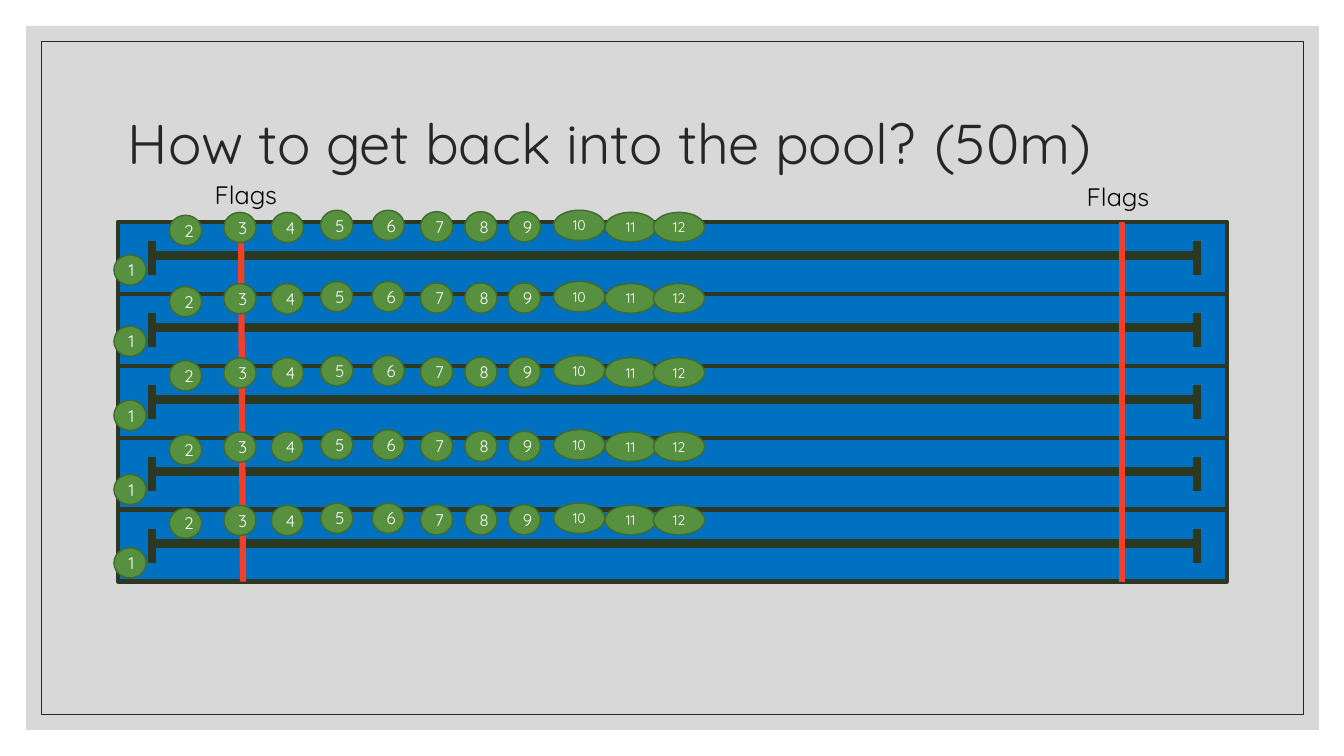
from lxml import etree
from pptx import Presentation
from pptx import util as u
from pptx.dml.color import RGBColor
from pptx.enum import shapes, text
from pptx.oxml.ns import qn

WHITE = RGBColor(0xFF, 0xFF, 0xFF)
BLACK = RGBColor(0x00, 0x00, 0x00)
PANEL_GREY = RGBColor(0xBF, 0xBF, 0xBF)
INK = RGBColor(0x26, 0x26, 0x26)
WATER = RGBColor(0x00, 0x70, 0xC0)
LANE_EDGE = RGBColor(0x2E, 0x37, 0x22)
LANE_MARK = RGBColor(0x2B, 0x39, 0x22)
FLAG_RED = RGBColor(0xF0, 0x3F, 0x2B)
SWIMMER_GREEN = RGBColor(0x57, 0x90, 0x3F)
SWIMMER_EDGE = RGBColor(0x40, 0x6B, 0x2F)

LANES = 5
SWIMMER_COLUMNS = [-0.04, 0.51, 1.05, 1.52, 2.01, 2.52, 3, 3.44, 3.87, 4.32, 4.83, 5.31]
SWIMMER_LIFTS = [0, 0.55, 0.59, 0.59, 0.62, 0.62, 0.6, 0.6, 0.6, 0.62, 0.59, 0.59]
TEAM_ROWS = [0.46, 1.45, 2.48, 3.51, 4.53]


class PoolSlide:
    """Draws on a grid whose origin is the pool corner and whose rows are lanes."""

    font_name = "Quicksand"
    left, top = 1.17, 2.2
    column, row = 1, 3.57 / LANES

    def __init__(self, presentation):
        self.slide = presentation.slides.add_slide(presentation.slide_layouts[6])

    def point(self, x, y):
        return u.Inches(self.left + x * self.column), u.Inches(self.top + y * self.row)

    def box(self, x, y, columns, rows):
        return *self.point(x, y), u.Inches(columns * self.column), u.Inches(rows * self.row)

    def shape(self, kind, place, fill=None, edge=None, width=0, alpha=None):
        shape = self.slide.shapes.add_shape(kind, *self.box(*place))
        shape.shadow.inherit = False
        if fill is None:
            shape.fill.background()
        else:
            shape.fill.solid()
            shape.fill.fore_color.rgb = fill
        if alpha is not None:
            color = shape._element.spPr.find(qn("a:solidFill")).find(qn("a:srgbClr"))
            etree.SubElement(color, qn("a:alpha"), val=str(alpha * 1000))
        if edge is None:
            shape.line.fill.background()
        else:
            shape.line.color.rgb = edge
            shape.line.width = u.Pt(width)
        return shape

    def line(self, start, end, color, width):
        line = self.slide.shapes.add_connector(
            shapes.MSO_CONNECTOR.STRAIGHT, *self.point(*start), *self.point(*end))
        line.line.color.rgb = color
        line.line.width = u.Pt(width)
        etree.SubElement(line._element.spPr, qn("a:effectLst"))

    def set_text(self, shape, words, size, color, anchor=text.MSO_ANCHOR.TOP, **paragraph_format):
        frame = shape.text_frame
        frame.word_wrap = True
        frame.vertical_anchor = anchor
        paragraph = frame.paragraphs[0]
        for name, value in paragraph_format.items():
            setattr(paragraph, name, value)
        run = paragraph.add_run()
        run.text = words
        for name, value in {"name": self.font_name, "size": u.Pt(size)}.items():
            setattr(run.font, name, value)
        run.font.color.rgb = color

    def label(self, place, *words, **text_format):
        self.set_text(self.slide.shapes.add_textbox(*self.box(*place)), *words, **text_format)

    def lane(self, y):
        self.shape(shapes.MSO_SHAPE.RECTANGLE, (0, y, 11, 1), WATER, LANE_EDGE, 3)
        self.line((0.3, y + 0.47), (10.7, y + 0.47), LANE_MARK, 6)
        for x in (0.34, 10.7):
            self.line((x, y + 0.27), (x, y + 0.74), LANE_MARK, 6)

    def swimmer(self, number, x, y):
        wide = number > 9
        place = (x, y, 0.51 if wide else 0.32, 0.41 if number > 10 else 0.42)
        swimmer = self.shape(
            shapes.MSO_SHAPE.OVAL, place, SWIMMER_GREEN, SWIMMER_EDGE, 1)
        self.set_text(swimmer, str(number), 10 if wide else 12, WHITE,
                      anchor=text.MSO_ANCHOR.MIDDLE, alignment=text.PP_ALIGN.CENTER)


def main():
    presentation = Presentation()
    for name, inches in {"slide_width": 13.33, "slide_height": 7.5}.items():
        setattr(presentation, name, u.Inches(inches))
    pool = PoolSlide(presentation)

    rectangle = shapes.MSO_SHAPE.RECTANGLE
    pool.shape(rectangle, (-0.91, -2.72, 12.82, 9.78), PANEL_GREY, alpha=60)
    pool.shape(rectangle, (-0.76, -2.51, 12.52, 9.36), edge=INK, width=0.5)
    pool.label((0, -2.1, 11, 2.1), "How to get back into the pool?\t(50m)", 40, INK,
               anchor=text.MSO_ANCHOR.MIDDLE, line_spacing=0.9)

    for lane in range(LANES):
        pool.lane(lane)
    pool.line((1.22, 0.04), (1.24, LANES), FLAG_RED, 4.5)
    pool.line((9.96, 0), (9.96, LANES), FLAG_RED, 4.5)
    for x, y in ((0.86, -0.66), (9.51, -0.63)):
        pool.label((x, y, 1.05, 0.56), "Flags", 18, BLACK)

    for team_row in TEAM_ROWS:
        for number, (x, lift) in enumerate(zip(SWIMMER_COLUMNS, SWIMMER_LIFTS), 1):
            pool.swimmer(number, x, team_row - lift)

    presentation.save("out.pptx")


if __name__ == "__main__":
    main()
